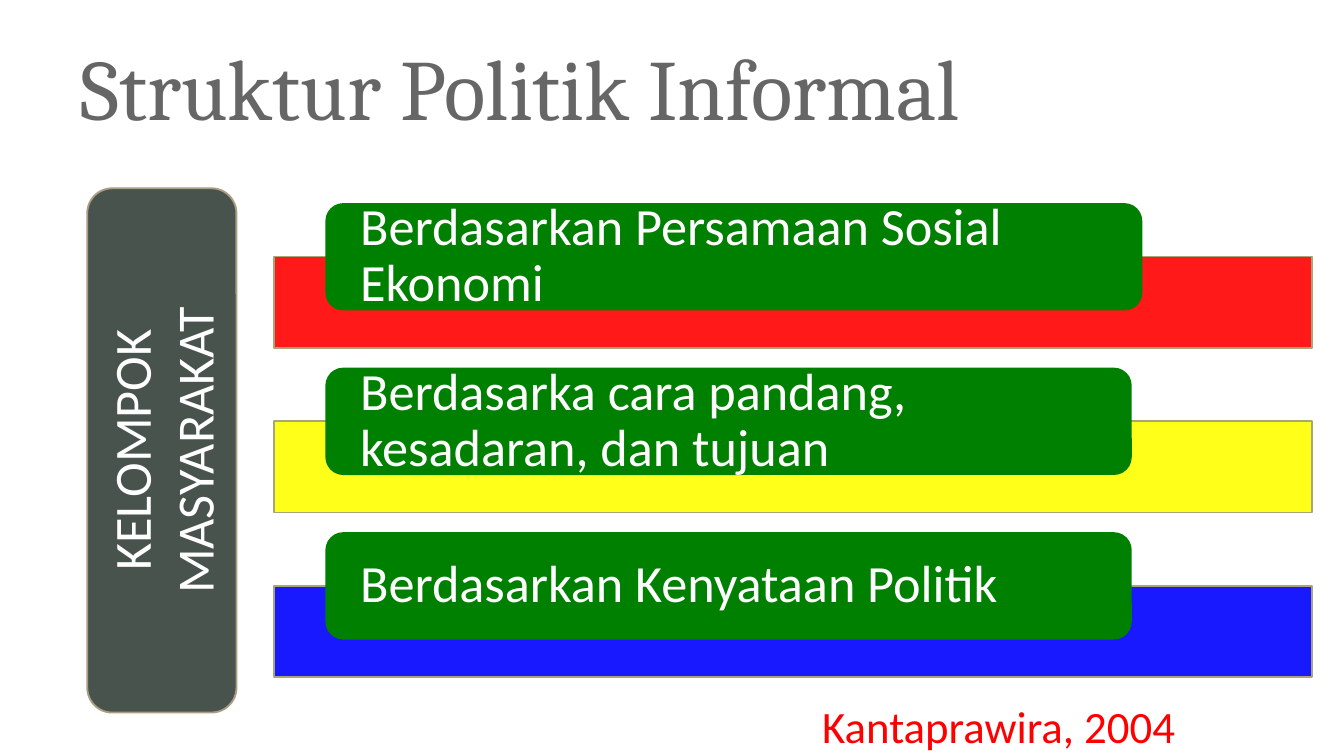
"""Build the slide on informal political structure."""
from dataclasses import dataclass

from lxml import etree
from pptx import Presentation
from pptx.dml.color import RGBColor
from pptx.enum import shapes, text
from pptx.oxml import ns
from pptx.util import Cm, Pt

FIRST_BAND_TOP = 4.85
FIRST_LABEL_TOP = 3.84
ROW_PITCH = 3.11


@dataclass
class Row:
    label: str
    band_color: str
    label_width: float = 15.24


ROWS = [
    Row("Berdasarkan Persamaan Sosial Ekonomi", "FF0000", 15.44),
    Row("Berdasarka cara pandang, kesadaran, dan tujuan", "FFFF00"),
    Row("Berdasarkan Kenyataan Politik", "0000FF"),
]


def color(value: str) -> RGBColor:
    return RGBColor.from_string(value)


def write(shape, content: str, *, size: float = 28, font: str = "Calibri",
          fill: str = "FFFFFF", align=text.PP_ALIGN.LEFT,
          anchor=text.MSO_ANCHOR.MIDDLE, spacing: float = 1.0,
          side: float = 0.25, edge: float = 0.13) -> None:
    frame = shape.text_frame
    frame.word_wrap = True
    frame.auto_size = text.MSO_AUTO_SIZE.NONE
    frame.vertical_anchor = anchor
    frame.margin_left = frame.margin_right = Cm(side)
    frame.margin_top = frame.margin_bottom = Cm(edge)
    frame.text = content
    paragraph = frame.paragraphs[0]
    paragraph.alignment = align
    paragraph.line_spacing = spacing
    paragraph.font.size = Pt(size)
    paragraph.font.name = font
    paragraph.font.color.rgb = color(fill)


def add_box(slide, kind, left: float, top: float, width: float, height: float,
            fill: str, line: str | None = None, opacity: int = 100):
    shape = slide.shapes.add_shape(kind, Cm(left), Cm(top), Cm(width), Cm(height))
    shape.shadow.inherit = False
    shape.fill.solid()
    shape.fill.fore_color.rgb = color(fill)
    if opacity < 100:
        tint = shape.fill._xPr.find(".//" + ns.qn("a:srgbClr"))
        etree.SubElement(tint, ns.qn("a:alpha")).set("val", str(opacity * 1000))
    if line:
        shape.line.color.rgb = color(line)
        shape.line.width = Pt(1)
    else:
        shape.line.fill.background()
    return shape


def add_text(slide, left: float, top: float, width: float, height: float,
             content: str, **style):
    box = slide.shapes.add_textbox(Cm(left), Cm(top), Cm(width), Cm(height))
    write(box, content, **style)
    return box


def add_row(slide, index: int, row: Row) -> None:
    offset = index * ROW_PITCH
    add_box(slide, shapes.MSO_SHAPE.RECTANGLE, 5.18, FIRST_BAND_TOP + offset,
            19.61, 1.73, row.band_color, line="A9A57B", opacity=90)
    label = add_box(slide, shapes.MSO_SHAPE.ROUNDED_RECTANGLE, 6.15,
                    FIRST_LABEL_TOP + offset, row.label_width, 2.03, "008000")
    write(label, row.label, spacing=0.9, side=0.56, edge=0)


def main() -> None:
    presentation = Presentation()
    presentation.slide_width, presentation.slide_height = Cm(25.4), Cm(14.29)
    slide = presentation.slides.add_slide(presentation.slide_layouts[5])

    title = slide.shapes.title
    title.left, title.top = Cm(1.27), Cm(0.43)
    title.width, title.height = Cm(18.08), Cm(2.39)
    write(title, "Struktur Politik Informal", size=46, font="Cambria", fill="666666")

    for index, row in enumerate(ROWS):
        add_row(slide, index, row)

    add_box(slide, shapes.MSO_SHAPE.ROUNDED_RECTANGLE, 1.65, 3.56, 2.82, 9.91,
            "48534E", line="AC9C84")
    group_name = add_text(slide, -1.8, 7.24, 9.7, 2.54, "KELOMPOK MASYARAKAT",
                          align=text.PP_ALIGN.CENTER)
    group_name.rotation = 270
    add_text(slide, 15.29, 13.08, 9.5, 0.97, "Kantaprawira, 2004", size=24,
             fill="FF0000", anchor=text.MSO_ANCHOR.TOP)

    presentation.save("out.pptx")


if __name__ == "__main__":
    main()
